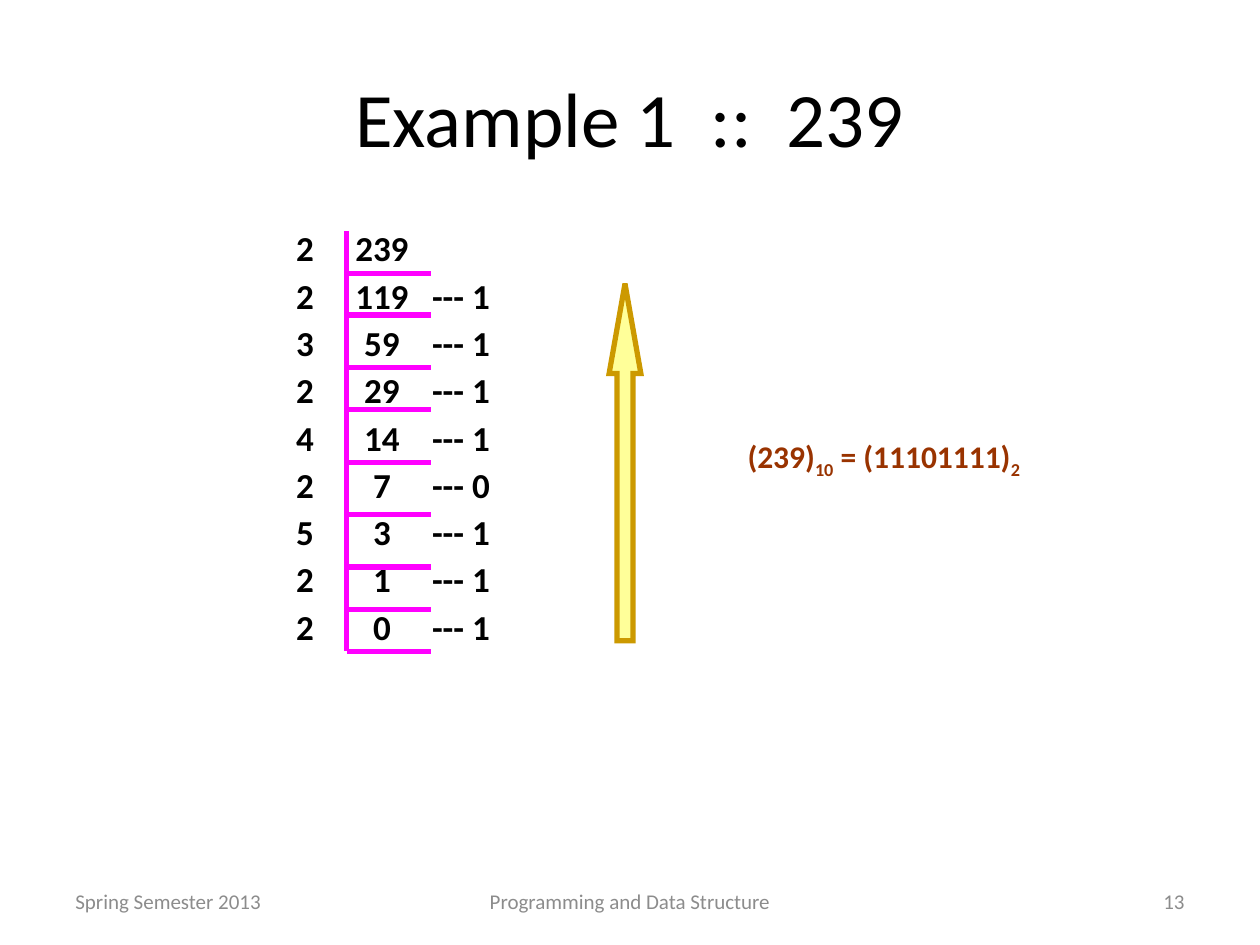
from lxml import etree
from pptx import Presentation
from pptx import util as u
from pptx.dml.color import RGBColor
from pptx.enum import shapes, text
from pptx.oxml.ns import qn

BLACK = RGBColor(0x00, 0x00, 0x00)
GREY = RGBColor(0x8C, 0x8C, 0x8C)
MAGENTA = RGBColor(0xFF, 0x00, 0xFF)
YELLOW = RGBColor(0xFF, 0xFF, 0x99)
GOLD = RGBColor(0xCC, 0x99, 0x00)
BROWN = RGBColor(0x99, 0x33, 0x00)

LEFT, CENTER, RIGHT = text.PP_ALIGN.LEFT, text.PP_ALIGN.CENTER, text.PP_ALIGN.RIGHT
TOP, MIDDLE = text.MSO_ANCHOR.TOP, text.MSO_ANCHOR.MIDDLE

DIVISIONS = [
    ("2", "239"),
    ("2", "119", "--- 1"),
    ("3", "59", "--- 1"),
    ("2", "29", "--- 1"),
    ("4", "14", "--- 1"),
    ("2", "7", "--- 0"),
    ("5", "3", "--- 1"),
    ("2", "1", "--- 1"),
    ("2", "0", "--- 1"),
]
RUNG_OFFSETS = [0.85, 1.69, 2.75, 3.6, 4.66, 5.72, 6.77, 7.62, 8.47]
COLUMN_TABS = [(1.73, "ctr"), (2.74, "l")]


def set_font(para, size, color, bold=False):
    """Set the font of a whole paragraph."""
    font = para.font
    font.name, font.size, font.bold = "Calibri", u.Pt(size), bold
    font.color.rgb = color


def add_text(page, box, lines, size, color, bold=False, align=LEFT, anchor=TOP):
    """Place a wrapped text box with one paragraph per line."""
    frame = page.shapes.add_textbox(*map(u.Cm, box)).text_frame
    frame.word_wrap = True
    frame.vertical_anchor = anchor
    for number, line in enumerate(lines):
        para = frame.add_paragraph() if number else frame.paragraphs[0]
        para.text = line
        para.alignment = align
        set_font(para, size, color, bold)
    return frame


def add_line(page, x1, y1, x2, y2):
    """Draw one magenta line of the ladder."""
    line = page.shapes.add_connector(
        shapes.MSO_CONNECTOR.STRAIGHT, *map(u.Cm, (x1, y1, x2, y2)))
    line.line.color.rgb = MAGENTA
    line.line.width = u.Pt(3)
    etree.SubElement(line._element.spPr, qn("a:effectLst"))


def add_divisions(page, box):
    """Write divisor, quotient and remainder of each step in tabbed columns."""
    lines = ["\t".join(step) for step in DIVISIONS]
    frame = add_text(page, box, lines, 20, BLACK, bold=True)
    for para in frame.paragraphs:
        para.space_before = u.Pt(3)
        tabs = etree.Element(qn("a:tabLst"))
        for position, kind in COLUMN_TABS:
            etree.SubElement(tabs, qn("a:tab"), pos=str(u.Cm(position)), algn=kind)
        para._p.pPr.find(qn("a:defRPr")).addprevious(tabs)


def add_ladder(page, box):
    """Draw the upright rail and a rung under each division."""
    left, top, width, height = box
    for offset in RUNG_OFFSETS:
        add_line(page, left, top + offset, left + width, top + offset)
    add_line(page, left, top, left, top + height)


def add_reading_arrow(page, box):
    """Draw the arrow that shows the reading order of the remainders."""
    arrow = page.shapes.add_shape(shapes.MSO_SHAPE.UP_ARROW, *map(u.Cm, box))
    arrow.shadow.inherit = False
    arrow.adjustments[0] = 0.5
    arrow.adjustments[1] = 2.83
    arrow.fill.solid()
    arrow.fill.fore_color.rgb = YELLOW
    arrow.line.color.rgb = GOLD
    arrow.line.width = u.Pt(3)
    etree.SubElement(arrow.line._ln, qn("a:miter"), lim="800000")


def add_result(page, box):
    """Write the decimal and binary numbers with their bases as subscripts."""
    para = add_text(page, box, [""], 18, BROWN, bold=True).paragraphs[0]
    para.space_before = u.Pt(9)
    for number, base in [("(239)", "10"), (" = (11101111)", "2")]:
        para.add_run().text = number
        span = para.add_run()
        span.text = base
        span.font._element.set("baseline", "-25000")


def add_footer(page, box):
    """Place the date, course name and page number along the bottom."""
    left, top, width, height = box
    side, middle = 5.93, 8.04
    parts = [
        ("Spring Semester 2013", left, side, LEFT),
        ("Programming and Data Structure", left + (width - middle) / 2, middle, CENTER),
        ("13", left + width - side, side, RIGHT),
    ]
    for words, x, part_width, align in parts:
        add_text(page, (x, top, part_width, height), [words], 12, GREY,
                 align=align, anchor=MIDDLE)


def main():
    """Build the slide and save the deck."""
    deck = Presentation()
    deck.slide_width, deck.slide_height = u.Cm(25.4), u.Cm(19.05)
    page = deck.slides.add_slide(deck.slide_layouts[6])
    add_text(page, (1.27, 0.76, 22.86, 3.18), ["Example 1  ::  239"], 44, BLACK,
             align=CENTER, anchor=MIDDLE)
    add_footer(page, (1.27, 17.66, 22.86, 1.01))
    add_divisions(page, (5.72, 4.45, 8.26, 8.89))
    add_ladder(page, (6.99, 4.66, 1.69, 8.47))
    add_reading_arrow(page, (12.28, 5.72, 0.64, 7.2))
    add_result(page, (14.82, 8.68, 9.53, 1.27))
    deck.save("out.pptx")


if __name__ == "__main__":
    main()
